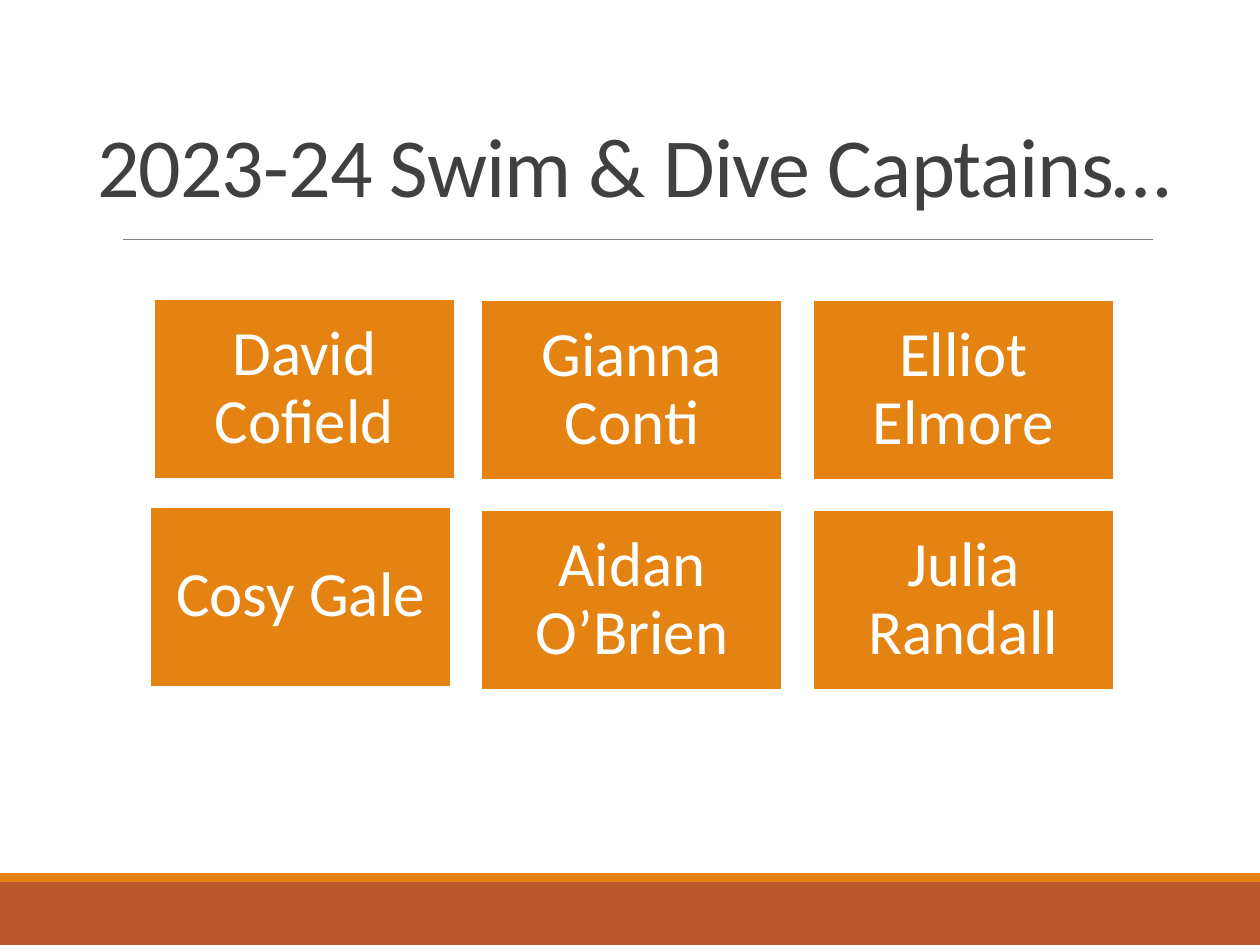
from pptx import Presentation
from pptx.dml.color import RGBColor
from pptx.enum.shapes import MSO_CONNECTOR, MSO_SHAPE
from pptx.enum.text import MSO_ANCHOR, MSO_AUTO_SIZE, PP_ALIGN
from pptx.oxml.ns import qn
from pptx.util import Inches, Pt
from lxml import etree

RECTANGLE = MSO_SHAPE.RECTANGLE
STRAIGHT = MSO_CONNECTOR.STRAIGHT
LEFT, CENTER = PP_ALIGN.LEFT, PP_ALIGN.CENTER
MIDDLE, BOTTOM = MSO_ANCHOR.MIDDLE, MSO_ANCHOR.BOTTOM
NO_AUTOFIT = MSO_AUTO_SIZE.NONE
TITLE_ONLY_LAYOUT = 5

FONT = "Calibri"
COLORS = {
    "orange": "E48312",
    "rust": "BD582C",
    "rule": "808080",
    "title": "404040",
    "white": "FFFFFF",
}
CARD_WIDTH, CARD_HEIGHT = 2.39, 1.43
CAPTAINS = [
    ("David Cofield", 1.22, 2.37),
    ("Gianna Conti", 3.82, 2.38),
    ("Elliot Elmore", 6.45, 2.38),
    ("Cosy Gale", 1.19, 4.02),
    ("Aidan O’Brien", 3.82, 4.05),
    ("Julia Randall", 6.45, 4.05),
]


def color(name):
    return RGBColor.from_string(COLORS[name])


def format_paragraph(paragraph, size, color_name, alignment, line_spacing):
    paragraph.alignment = alignment
    paragraph.line_spacing = line_spacing
    font = paragraph.runs[0].font
    font.name = FONT
    font.size = Pt(size)
    font.color.rgb = color(color_name)


def add_rectangle(slide, left, top, width, height, fill):
    shape = slide.shapes.add_shape(
        RECTANGLE, Inches(left), Inches(top), Inches(width), Inches(height)
    )
    shape.shadow.inherit = False
    shape.fill.solid()
    shape.fill.fore_color.rgb = color(fill)
    shape.line.fill.background()
    return shape


def add_rule(slide, left, right, top):
    rule = slide.shapes.add_connector(
        STRAIGHT, Inches(left), Inches(top), Inches(right), Inches(top)
    )
    rule.line.color.rgb = color("rule")
    rule.line.width = Pt(0.5)
    etree.SubElement(rule.element.spPr, qn("a:effectLst"))


def set_title(slide, text):
    title = slide.shapes.title
    title.left, title.top = Inches(0.67), Inches(0.17)
    title.width, title.height = Inches(8.75), Inches(1.58)
    frame = title.text_frame
    frame.text = text
    frame.word_wrap = True
    frame.auto_size = NO_AUTOFIT
    frame.vertical_anchor = BOTTOM
    paragraph = frame.paragraphs[0]
    format_paragraph(paragraph, 48, "title", LEFT, 0.85)
    paragraph.runs[0].font._element.set("spc", "-50")


def add_captain(slide, name, left, top):
    card = add_rectangle(slide, left, top, CARD_WIDTH, CARD_HEIGHT, "orange")
    card.line.color.rgb = color("white")
    card.line.width = Pt(1.25)
    frame = card.text_frame
    frame.text = name
    frame.word_wrap = True
    frame.vertical_anchor = MIDDLE
    frame.margin_left = frame.margin_right = Inches(0.15)
    frame.margin_top = frame.margin_bottom = Inches(0.15)
    format_paragraph(frame.paragraphs[0], 36, "white", CENTER, 0.9)


def main():
    presentation = Presentation()
    presentation.slide_width = Inches(10)
    presentation.slide_height = Inches(7.5)
    layout = presentation.slide_layouts[TITLE_ONLY_LAYOUT]
    slide = presentation.slides.add_slide(layout)

    add_rectangle(slide, 0, 7, 10, 0.5, "rust")
    add_rectangle(slide, 0, 6.93, 10, 0.07, "orange")
    add_rule(slide, 0.98, 9.15, 1.9)
    set_title(slide, "2023-24 Swim & Dive Captains…")
    for name, left, top in CAPTAINS:
        add_captain(slide, name, left, top)

    presentation.save("out.pptx")


if __name__ == "__main__":
    main()
